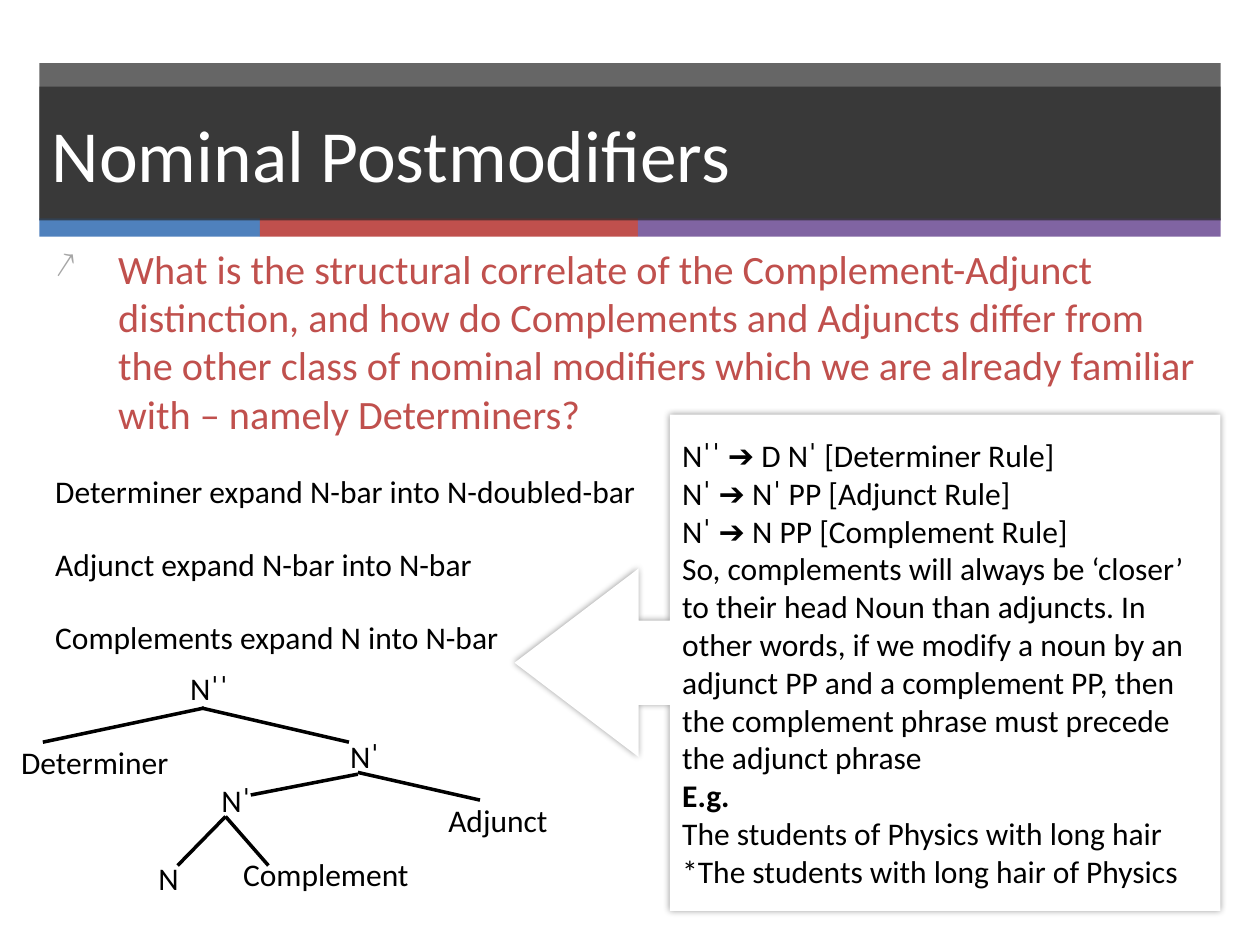
from lxml.etree import SubElement
from pptx import Presentation
from pptx.dml.color import RGBColor
from pptx.enum.shapes import MSO_CONNECTOR, MSO_SHAPE
from pptx.enum.text import MSO_ANCHOR, PP_ALIGN
from pptx.oxml.ns import qn
from pptx.util import Pt


def colour(value):
    """Turn a hex string into a colour."""
    return RGBColor.from_string(value)


def add_element(parent, tag, **attributes):
    """Append a DrawingML element and return it."""
    return SubElement(parent, qn(tag), attributes)


def write(paragraph, text, size=18, color="000000", bold=False, before=0, font="Calibri"):
    """Write formatted text into a paragraph."""
    paragraph.alignment = PP_ALIGN.LEFT
    paragraph.space_before = Pt(before)
    run = paragraph.add_run()
    run.text = text
    run.font.name = font
    run.font.size = Pt(size)
    run.font.bold = bold
    run.font.color.rgb = colour(color)


def write_all(frame, entries):
    """Write one paragraph for each pair of text and format."""
    for index, (text, style) in enumerate(entries):
        paragraph = frame.add_paragraph() if index else frame.paragraphs[0]
        write(paragraph, text, **style)


def set_bullet(paragraph, character, color, percent, indent):
    """Give a paragraph a hanging bullet."""
    properties = paragraph._p.get_or_add_pPr()
    properties.set("marL", str(Pt(indent)))
    properties.set("indent", str(-Pt(indent)))
    add_element(add_element(properties, "a:buClr"), "a:srgbClr", val=color)
    add_element(properties, "a:buSzPct", val=str(percent * 1000))
    add_element(properties, "a:buChar", char=character)


class SlideBuilder:
    """Hold the line style and the current slide."""

    line_color = "000000"
    line_width = 2

    def __init__(self, slide):
        """Keep the slide to draw on."""
        self.slide = slide

    def shape(self, kind, left, top, width, height, fill, opacity=100):
        """Add a borderless filled shape."""
        shape = self.slide.shapes.add_shape(kind, Pt(left), Pt(top), Pt(width), Pt(height))
        shape.shadow.inherit = False
        shape.fill.solid()
        shape.fill.fore_color.rgb = colour(fill)
        shape.line.fill.background()
        if opacity < 100:
            fill_color = shape._element.spPr.find(qn("a:solidFill")).find(qn("a:srgbClr"))
            add_element(fill_color, "a:alpha", val=str(opacity * 1000))
        shape.text_frame.word_wrap = True
        shape.text_frame.vertical_anchor = MSO_ANCHOR.MIDDLE
        return shape

    def text(self, left, top, width, height, entries):
        """Add a wrapping text box."""
        box = self.slide.shapes.add_textbox(Pt(left), Pt(top), Pt(width), Pt(height))
        box.text_frame.word_wrap = True
        write_all(box.text_frame, entries)
        return box

    def line(self, *points):
        """Add a straight branch of the tree."""
        connector = self.slide.shapes.add_connector(
            MSO_CONNECTOR.STRAIGHT, *[Pt(point) for point in points])
        connector.line.color.rgb = colour(self.line_color)
        connector.line.width = Pt(self.line_width)
        add_element(connector._element.spPr, "a:effectLst")

    def callout(self, left, top, width, height, adjustments, entries):
        """Add a white left arrow callout with a soft shadow."""
        shape = self.shape(MSO_SHAPE.LEFT_ARROW_CALLOUT, left, top, width, height, "FFFFFF")
        for index, value in enumerate(adjustments):
            shape.adjustments[index] = value
        shadow = add_element(shape._element.spPr.find(qn("a:effectLst")), "a:outerShdw",
                             blurRad=str(Pt(4)), dist="0", dir="5400000", rotWithShape="0")
        shadow_color = add_element(shadow, "a:srgbClr", val="000000")
        add_element(shadow_color, "a:alpha", val="40000")
        write_all(shape.text_frame, entries)


def build_header(builder):
    """Draw the title band and its coloured stripe."""
    builder.shape(MSO_SHAPE.RECTANGLE, 22.5, 36, 675, 90, "262626", 70)
    left = 22.5
    for width, fill in ((126, "4F81BD"), (216, "C0504D"), (333, "8064A2")):
        builder.shape(MSO_SHAPE.RECTANGLE, left, 124.8, width, 10.5, fill)
        left += width
    title = builder.shape(MSO_SHAPE.RECTANGLE, 22.5, 49.5, 675, 76.5, "262626", 70)
    write_all(title.text_frame, [("Nominal Postmodifiers", {"size": 42, "color": "FFFFFF"})])


def build_body(builder):
    """Write the question and the three expansion rules."""
    question = ("What is the structural correlate of the Complement-Adjunct distinction, "
                "and how do Complements and Adjuncts differ from the other class of nominal "
                "modifiers which we are already familiar with – namely Determiners?")
    rules = ("Determiner expand N-bar into N-doubled-bar",
             "Adjunct expand N-bar into N-bar",
             "Complements expand N into N-bar")
    entries = [(question, {"size": 23, "color": "C0504D", "before": 20})]
    entries += [(rule, {"before": 20}) for rule in rules]
    body = builder.text(24.5, 136, 673, 251, entries)
    set_bullet(body.text_frame.paragraphs[0], "↗", "A6A6A6", 90, 36)


def build_tree(builder):
    """Draw the phrase tree."""
    branches = ((115.2, 404.6, 199.4, 424.1), (116.6, 404.6, 24.5, 424.1),
                (204.5, 442.4, 143.3, 454.3), (204.5, 441.4, 274.3, 457.2),
                (128.9, 466.6, 101.5, 494.6), (128.9, 466.6, 153.4, 494.6))
    for branch in branches:
        builder.line(*branch)
    nodes = (("Nˈˈ", 101.5, 378.7, 46.8), ("Nˈ", 193, 417.6, 46.8),
             ("Nˈ", 119.5, 442.8, 45.4), ("Determiner", 5, 421.2, 110.2),
             ("Adjunct", 249.1, 454.3, 103), ("N", 83.5, 487.4, 45.4),
             ("Complement", 131.8, 485.3, 123.8))
    for label, left, top, width in nodes:
        builder.text(left, top, width, 28.8, [(label, {})])


def build_rules(builder):
    """Write the phrase structure rules in the callout."""
    conclusion = ("So, complements will always be ‘closer’ to their head Noun than adjuncts. "
                  "In other words, if we modify a noun by an adjunct PP and a complement PP, "
                  "then the complement phrase must precede the adjunct phrase")
    entries = [("Nˈˈ ➔ D Nˈ [Determiner Rule]", {}),
               ("Nˈ ➔ Nˈ PP [Adjunct Rule]", {}),
               ("Nˈ ➔ N PP [Complement Rule]", {}),
               (conclusion, {}),
               ("E.g.", {"bold": True}),
               ("The students of Physics with long hair", {}),
               ("*The students with long hair of Physics", {})]
    builder.callout(294, 236.9, 403.4, 283.7, (0.17, 0.19, 0.25, 0.78), entries)


def main():
    """Build and save the presentation."""
    presentation = Presentation()
    presentation.slide_width = Pt(720)
    presentation.slide_height = Pt(540)
    builder = SlideBuilder(presentation.slides.add_slide(presentation.slide_layouts[6]))
    build_header(builder)
    build_body(builder)
    build_tree(builder)
    build_rules(builder)
    presentation.save("out.pptx")


if __name__ == "__main__":
    main()
